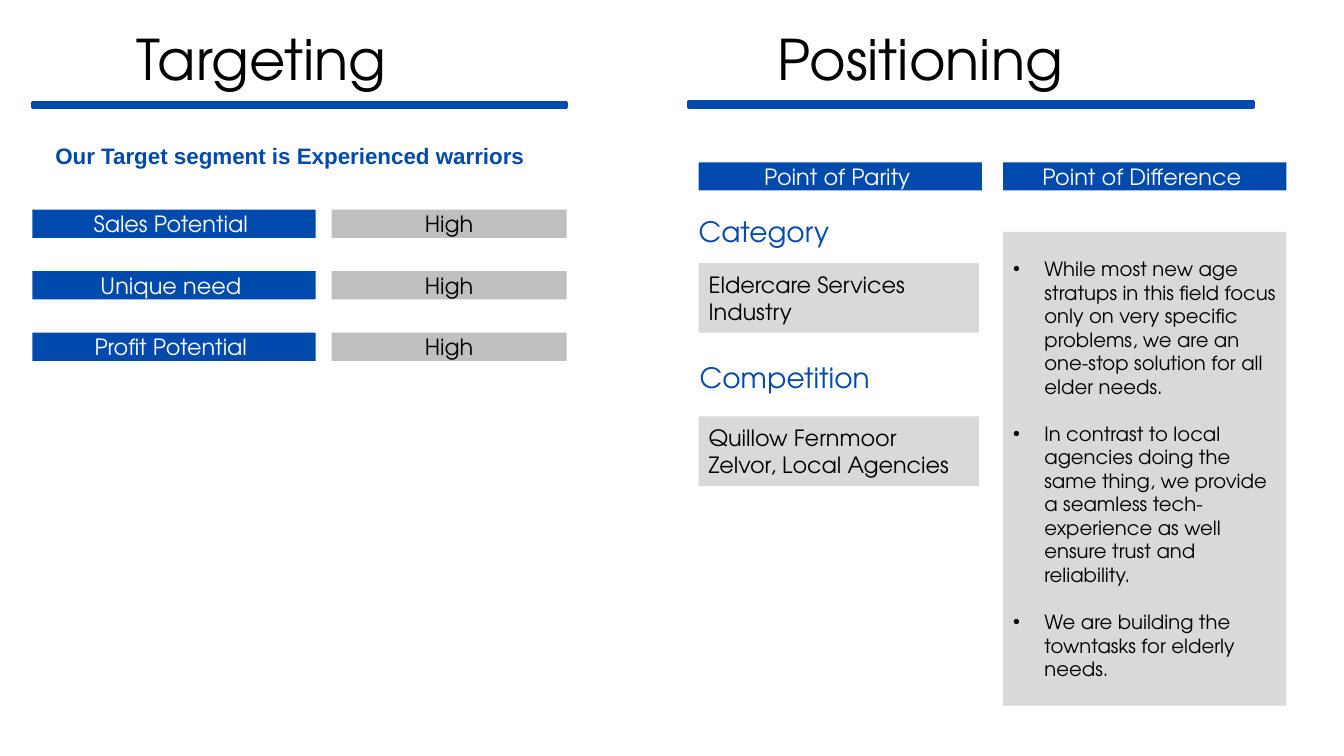
import dataclasses

import pptx
import pptx.dml.color
import pptx.enum.shapes
import pptx.enum.text
import pptx.oxml.ns
import pptx.util
from lxml import etree
from pptx.shapes.autoshape import Shape
from pptx.slide import Slide

SCALE = 9144
FONT = "TeX Gyre Adventor"
COLORS = {
    "blue": "004AAD",
    "black": "000000",
    "white": "FFFFFF",
    "pale": "D9D9D9",
    "gray": "BFBFBF",
}
ALIGN = pptx.enum.text.PP_ALIGN
ANCHOR = pptx.enum.text.MSO_ANCHOR


@dataclasses.dataclass
class Label:
    text: str
    left: int
    top: int
    width: int
    height: int
    size: int
    color: str = "black"
    font: str = FONT
    bold: bool = False
    wrap: bool = True


@dataclasses.dataclass
class Box:
    left: int
    top: int
    width: int
    height: int
    fill: str
    text: str = ""
    color: str = "black"
    size: int = 16
    center: bool = False
    edge: bool = False
    bullet: bool = False


def px(count: int) -> pptx.util.Emu:
    return pptx.util.Emu(count * SCALE)


def rgb(name: str) -> pptx.dml.color.RGBColor:
    return pptx.dml.color.RGBColor.from_string(COLORS[name])


def style(shape: Shape, item: Label | Box, font: str, bold: bool) -> None:
    for para in shape.text_frame.paragraphs:
        for run in para.runs:
            run.font.name = font
            run.font.size = pptx.util.Pt(item.size)
            run.font.bold = bold
            run.font.color.rgb = rgb(item.color)


def add_label(slide: Slide, item: Label) -> None:
    shape = slide.shapes.add_textbox(
        px(item.left), px(item.top), px(item.width), px(item.height))
    frame = shape.text_frame
    frame.text = item.text
    frame.word_wrap = item.wrap
    frame.auto_size = pptx.enum.text.MSO_AUTO_SIZE.SHAPE_TO_FIT_TEXT
    style(shape, item, item.font, item.bold)


def add_bullets(shape: Shape) -> None:
    for index, para in enumerate(shape.text_frame.paragraphs):
        if index:
            para.space_before = pptx.util.Pt(16.8)
        props = para._p.get_or_add_pPr()
        props.set("marL", str(px(31)))
        props.set("indent", str(-px(31)))
        tint = etree.SubElement(props, pptx.oxml.ns.qn("a:buClr"))
        etree.SubElement(tint, pptx.oxml.ns.qn("a:srgbClr"), val=COLORS["black"])
        etree.SubElement(props, pptx.oxml.ns.qn("a:buFont"), typeface="Arial")
        etree.SubElement(props, pptx.oxml.ns.qn("a:buChar"), char="•")


def add_box(slide: Slide, item: Box) -> None:
    shape = slide.shapes.add_shape(
        pptx.enum.shapes.MSO_SHAPE.RECTANGLE,
        px(item.left), px(item.top), px(item.width), px(item.height))
    shape.shadow.inherit = False
    shape.fill.solid()
    shape.fill.fore_color.rgb = rgb(item.fill)
    if item.edge:
        shape.line.color.rgb = rgb(item.fill)
        shape.line.width = pptx.util.Pt(2)
    else:
        shape.line.fill.background()
    if not item.text:
        return
    frame = shape.text_frame
    frame.text = item.text
    frame.word_wrap = True
    frame.vertical_anchor = ANCHOR.MIDDLE
    for para in frame.paragraphs:
        para.alignment = ALIGN.CENTER if item.center else ALIGN.LEFT
    style(shape, item, FONT, False)
    if item.bullet:
        add_bullets(shape)


def banner(left: int, top: int, text: str) -> Box:
    return Box(left, top, 281, 28, "blue", text, "white", center=True)


POINTS = (
    "While most new age stratups in this field focus only on very specific "
    "problems, we are an one-stop solution for all elder needs.",
    "In contrast to local agencies doing the same thing, we provide a seamless "
    "tech-experience as well ensure trust and reliability.",
    "We are building the towntasks for elderly needs.",
)
LABELS = (
    Label("Targeting", 126, 19, 330, 77, 40),
    Label("Positioning", 761, 19, 330, 77, 40),
    Label("Our Target segment is Experienced warriors", 45, 136, 821, 37, 16,
          "blue", "Arial", True),
    Label("Category", 683, 208, 156, 44, 20, "blue", wrap=False),
    Label("Competition", 684, 353, 198, 44, 20, "blue", wrap=False),
)
BOXES = (
    Box(32, 102, 530, 5, "blue", edge=True),
    Box(683, 101, 560, 6, "blue", edge=True),
    banner(693, 161, "Point of Parity "),
    banner(995, 161, "Point of Difference "),
    Box(693, 261, 278, 69, "pale", "Eldercare Services Industry"),
    Box(693, 413, 278, 69, "pale", "Quillow Fernmoor\nZelvor, Local Agencies"),
    Box(995, 230, 281, 470, "pale", "\n".join(POINTS), size=14, bullet=True),
)
TRAITS = ("Sales Potential ", "Unique need ", "Profit Potential ")


def main() -> None:
    deck = pptx.Presentation()
    deck.slide_width = px(1333)
    deck.slide_height = px(750)
    slide = deck.slides.add_slide(deck.slide_layouts[6])
    for box in BOXES:
        add_box(slide, box)
    for row, trait in enumerate(TRAITS):
        top = 208 + row * 61
        add_box(slide, banner(32, top, trait))
        add_box(slide, Box(329, top, 233, 28, "gray", "High", center=True))
    for label in LABELS:
        add_label(slide, label)
    deck.save("out.pptx")


if __name__ == "__main__":
    main()
